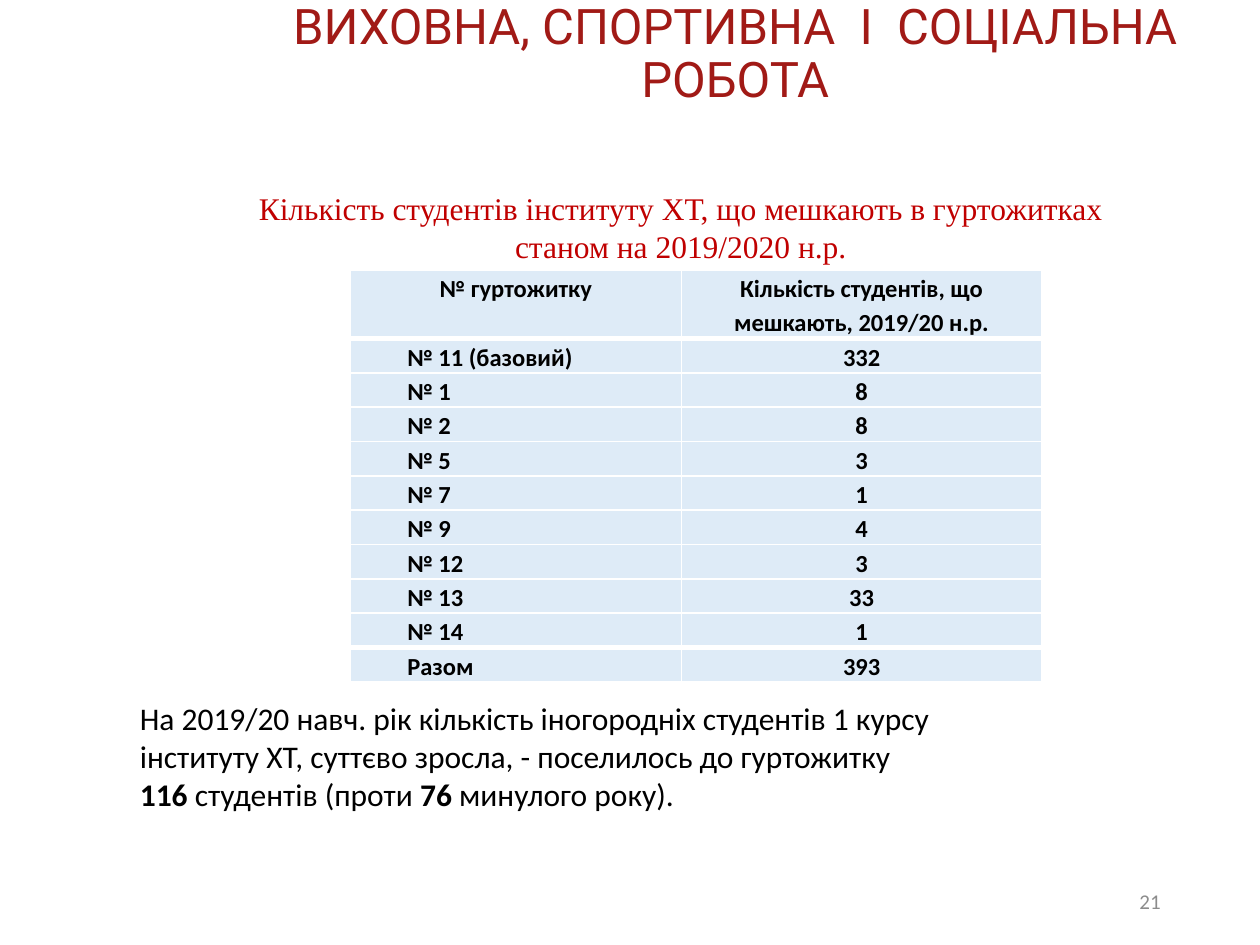
from lxml import etree
from pptx import Presentation
from pptx import util as u
from pptx.dml.color import RGBColor
from pptx.enum import text
from pptx.oxml.ns import qn

TITLE_RED = RGBColor(0xA1, 0x1A, 0x16)
CAPTION_RED = RGBColor(0xC0, 0x00, 0x00)
BLACK = RGBColor(0, 0, 0)
GREY = RGBColor(0x8C, 0x8C, 0x8C)
CELL_BLUE = RGBColor(0xDE, 0xEB, 0xF7)
BORDER = "FFFFFF"

LEFT, CENTER, RIGHT = text.PP_ALIGN.LEFT, text.PP_ALIGN.CENTER, text.PP_ALIGN.RIGHT
TOP, MIDDLE = text.MSO_ANCHOR.TOP, text.MSO_ANCHOR.MIDDLE

HEADER = ("№ гуртожитку", "Кількість студентів, що мешкають, 2019/20 н.р.")
DORMITORIES = [
    ("№ 11 (базовий)", 332), ("№ 1", 8), ("№ 2", 8), ("№ 5", 3), ("№ 7", 1),
    ("№ 9", 4), ("№ 12", 3), ("№ 13", 33), ("№ 14", 1),
]
TOTAL = ("Разом", sum(count for _, count in DORMITORIES))


def style(para, font, size, color, align=LEFT, bold=None):
    para.alignment = align
    para.font.name = font
    para.font.size = u.Pt(size)
    para.font.color.rgb = color
    para.font.bold = bold


def place(shape, box, anchor=TOP):
    shape.left, shape.top, shape.width, shape.height = (u.Cm(n) for n in box)
    frame = shape.text_frame
    frame.word_wrap = True
    frame.auto_size = text.MSO_AUTO_SIZE.NONE
    frame.vertical_anchor = anchor
    return frame


def add_box(page, box, anchor=TOP):
    return place(page.shapes.add_textbox(0, 0, 0, 0), box, anchor)


def add_title(page, box):
    frame = place(page.shapes.title, box)
    frame.margin_top = u.Cm(0.05)
    frame.text = "ВИХОВНА, СПОРТИВНА  І  СОЦІАЛЬНА РОБОТА"
    para = frame.paragraphs[0]
    para.line_spacing = 0.9
    style(para, "Roboto", 28, TITLE_RED, CENTER)


def set_borders(cell, top, bottom):
    properties = cell._tc.get_or_add_tcPr()
    widths = {"a:lnL": 1, "a:lnR": 1, "a:lnT": top, "a:lnB": bottom}
    for position, (tag, width) in enumerate(widths.items()):
        line = etree.Element(qn(tag), w=str(u.Pt(width)))
        fill = etree.SubElement(line, qn("a:solidFill"))
        etree.SubElement(fill, qn("a:srgbClr"), val=BORDER)
        properties.insert(position, line)


def add_dormitory_table(page, box):
    rows = [HEADER, *DORMITORIES, TOTAL]
    last = len(rows) - 1
    left, top, width, height = (u.Cm(n) for n in box)
    table = page.shapes.add_table(len(rows), 2, left, top, width, height).table
    table.horz_banding = False
    table.columns[0].width = u.Cm(6.68)
    table.columns[1].width = width - u.Cm(6.68)

    for i, values in enumerate(rows):
        table.rows[i].height = u.Cm(1.37 if i == 0 else 0.67)
        for j, value in enumerate(values):
            cell = table.cell(i, j)
            cell.margin_left = cell.margin_right = u.Cm(0.18)
            cell.margin_top = cell.margin_bottom = 0
            cell.fill.solid()
            cell.fill.fore_color.rgb = CELL_BLUE
            # Thick rules set off the header and the total
            set_borders(cell, 3 if i in (1, last) else 1,
                        3 if i in (0, last - 1) else 1)
            cell.text = str(value)
            para = cell.text_frame.paragraphs[0]
            is_label = i > 0 and j == 0
            if is_label:
                para._p.get_or_add_pPr().set("marL", str(u.Cm(0.97)))
            para.line_spacing = 1.15
            style(para, "Calibri", 14, BLACK, LEFT if is_label else CENTER, True)


def add_caption(page, box):
    frame = add_box(page, box)
    frame.text = ("Кількість студентів інституту ХТ, що мешкають в гуртожитках\n"
                  "станом на 2019/2020 н.р.")
    for para in frame.paragraphs:
        style(para, "Times New Roman", 18, CAPTION_RED, CENTER)


def add_note(page, box):
    para = add_box(page, box).paragraphs[0]
    style(para, "Calibri", 18, BLACK)
    spans = [
        ("На 2019/20 навч. рік кількість іногородніх студентів 1 курсу інституту ХТ, "
         "суттєво зросла, - поселилось до гуртожитку ", False),
        ("116", True),
        (" студентів (проти ", False),
        ("76 ", True),
        ("минулого року).", False),
    ]
    for words, bold in spans:
        span = para.add_run()
        span.text = words
        span.font.bold = bold


def add_page_number(page, box):
    frame = add_box(page, box, MIDDLE)
    frame.text = "21"
    style(frame.paragraphs[0], "Calibri", 12, GREY, RIGHT)


def main():
    deck = Presentation()
    deck.slide_width, deck.slide_height = u.Cm(25.4), u.Cm(19.05)
    page = deck.slides.add_slide(deck.slide_layouts.get_by_name("Title Only"))

    # Boxes are left, top, width, height in centimetres
    add_title(page, (4.24, 0, 21.16, 2.84))
    add_dormitory_table(page, (7.06, 5.44, 13.94, 8.07))
    add_caption(page, (3.02, 3.68, 21.41, 2.57))
    add_note(page, (2.57, 13.97, 16.56, 3.33))
    add_page_number(page, (17.93, 17.65, 5.72, 1.02))

    deck.save("out.pptx")


if __name__ == "__main__":
    main()
